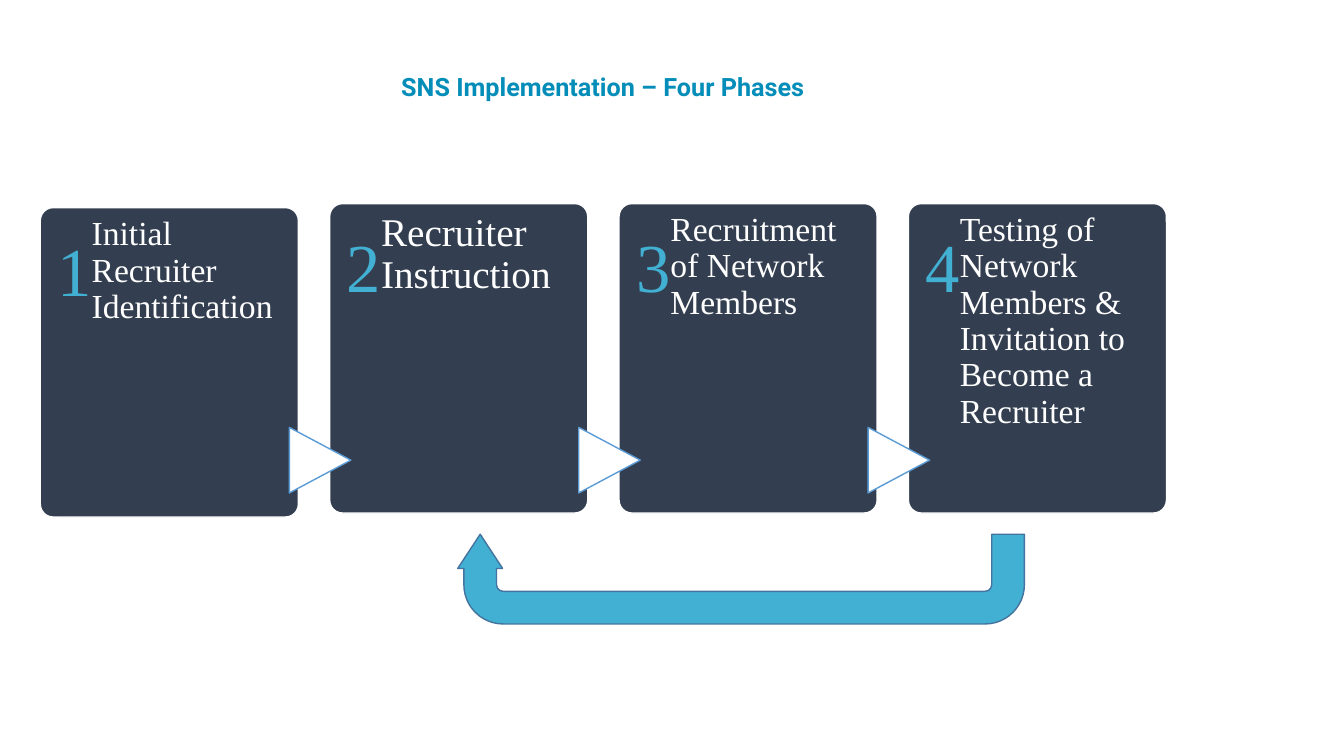
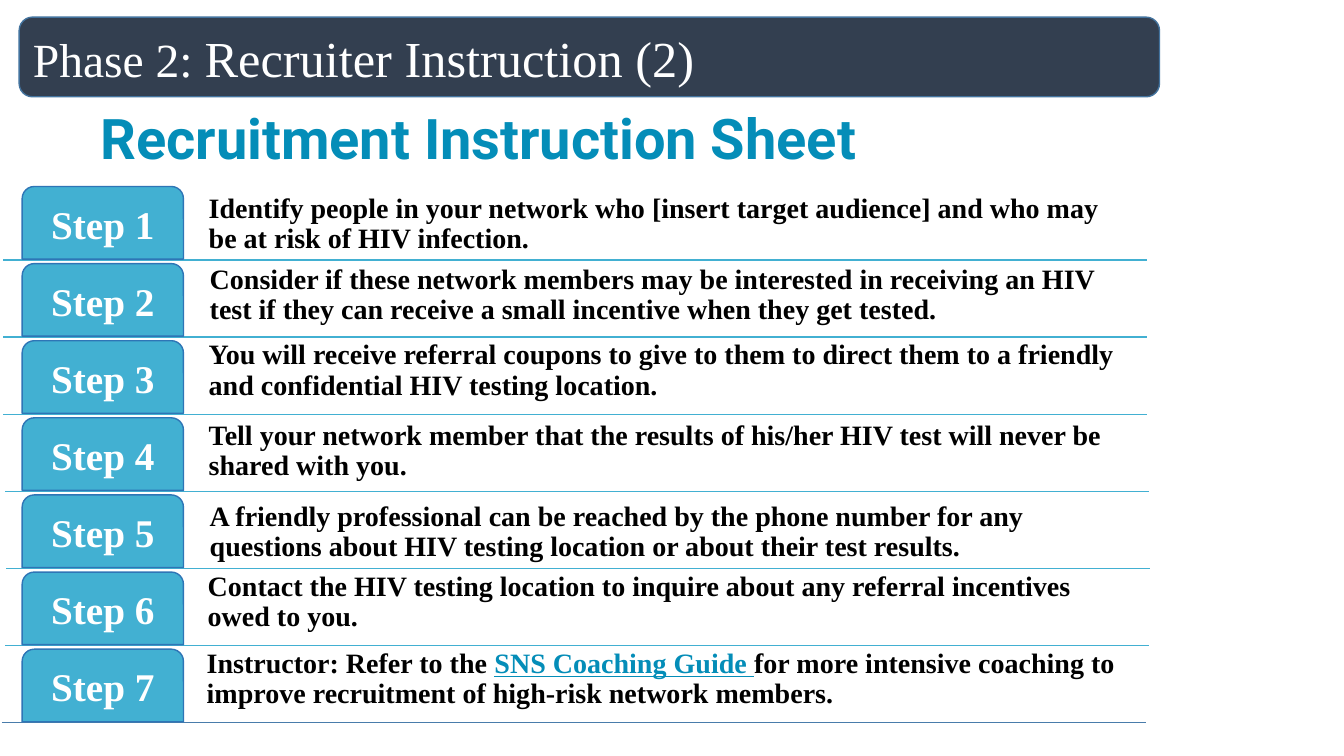
"""Build two slides on the phases and recruiter steps of the SNS programme."""
import pptx
import pptx.dml.color
import pptx.enum.shapes
import pptx.enum.text
import pptx.oxml.ns
import pptx.util
from lxml import etree

Inches = pptx.util.Inches
Pt = pptx.util.Pt
RGBColor = pptx.dml.color.RGBColor
SHAPE = pptx.enum.shapes.MSO_SHAPE
ALIGN = pptx.enum.text.PP_ALIGN
ANCHOR = pptx.enum.text.MSO_ANCHOR

NAVY = RGBColor(0x33, 0x3F, 0x50)
SKY = RGBColor(0x42, 0xB0, 0xD2)
TEAL = RGBColor(0x04, 0x8D, 0xB8)
EDGE = RGBColor(0x43, 0x73, 0x9E)
STEP_EDGE = RGBColor(0x2E, 0x75, 0xB6)
ARROW_EDGE = RGBColor(0x5B, 0x9B, 0xD5)
LAST_RULE = RGBColor(0x49, 0x7C, 0xAB)
WHITE = RGBColor(0xFF, 0xFF, 0xFF)
BLACK = RGBColor(0, 0, 0)
SERIF = "Times New Roman"
TITLE = dict(font="Roboto", color=TEAL, bold=True, anchor=ANCHOR.MIDDLE)


def add_text(s, text, box=None, sp=None, size=20, font=SERIF, color=BLACK, bold=False,
             align=ALIGN.LEFT, anchor=ANCHOR.TOP, inset=(0.1, 0.05, 0.1, 0.05), spacing=0.9):
    """Write text, or (text, overrides) runs, into a shape or a new text box."""
    if sp is None:
        sp = s.shapes.add_textbox(*map(Inches, box))
    tf = sp.text_frame
    tf.word_wrap = True
    tf.vertical_anchor = anchor
    tf.margin_left, tf.margin_top, tf.margin_right, tf.margin_bottom = map(Inches, inset)
    p = tf.paragraphs[0]
    p.alignment = align
    p.line_spacing = spacing
    for words, change in [(text, {})] if isinstance(text, str) else text:
        r = p.add_run()
        r.text = words
        r.font.name = font
        r.font.size = Pt(change.get("size", size))
        r.font.bold = bold
        r.font.underline = change.get("underline", False)
        r.font.color.rgb = change.get("color", color)


def add_shape(s, kind, box, fill, line, adjust=(), rotation=0):
    """Add a flat preset shape."""
    sp = s.shapes.add_shape(kind, *map(Inches, box))
    sp.shadow.inherit = False
    sp.fill.solid()
    sp.fill.fore_color.rgb = fill
    sp.line.color.rgb = line
    sp.line.width = Pt(1)
    sp.rotation = rotation
    for i, value in enumerate(adjust):
        sp.adjustments[i] = value
    return sp


prs = pptx.Presentation()
prs.slide_width = Inches(13.33)
prs.slide_height = Inches(7.5)
blank = prs.slide_layouts[6]

s = prs.slides.add_slide(blank)
add_text(s, "SNS Implementation – Four Phases", (1.15, 0.46, 9.66, 0.83), size=18,
         align=ALIGN.CENTER, **TITLE)
add_shape(s, SHAPE.U_TURN_ARROW, (4.54, 5.3, 5.62, 0.89), SKY, EDGE,
          (0.364, 0.25, 0.381, 0.438, 1), 180)

phases = [
    ("Initial Recruiter Identification", 24, 2.06),
    ("Recruiter Instruction", 28, 2.02),
    ("Recruitment of Network Members", 24, 2.02),
    ("Testing of Network Members & Invitation to Become a Recruiter", 24, 2.02),
]
for i, (phase, size, top) in enumerate(phases):
    left = 0.4 + 2.87 * i
    add_shape(s, SHAPE.ROUNDED_RECTANGLE, (left, top, 2.56, 3.07), NAVY, WHITE, [0.05])
    add_text(s, str(i + 1), (left, top, 0.51, 2.52), size=49, color=SKY,
             align=ALIGN.RIGHT, inset=(0, 0.29, 0, 0))
    if i:
        add_shape(s, SHAPE.FLOWCHART_EXTRACT, (left - 0.42, 4.26, 0.65, 0.61), WHITE,
                  ARROW_EDGE, rotation=90)
    add_text(s, phase, (left + 0.51, top, 1.9, 3.07), size=size, color=WHITE,
             inset=(0, 0.09, 0, 0))

s = prs.slides.add_slide(blank)
add_text(s, "Recruitment Instruction Sheet", (0.9, 0.97, 10.6, 0.87), size=40, **TITLE)
steps = [
    ("Identify people in your network who [insert target audience] and who may be at risk of HIV "
     "infection.", 2.03, 2.57, 0.03),
    ("Consider if these network members may be interested in receiving an HIV test if they can "
     "receive a small incentive when they get tested.", 2.04, 3.27, 0.03),
    ("You will receive referral coupons to give to them to direct them to a friendly and "
     "confidential HIV testing location.", 2.03, 4.02, 0.03),
    ("Tell your network member that the results of his/her HIV test will never be shared with "
     "you.", 2.03, 4.82, 0.05),
    ("A friendly professional can be reached by the phone number for any questions about HIV "
     "testing location or about their test results.", 2.04, 5.62, 0.06),
    ("Contact the HIV testing location to inquire about any referral incentives owed to you.",
     2.02, 6.32, 0.05),
    ([("Instructor: Refer to the ", {}),
      ("SNS Coaching Guide ", {"color": TEAL, "underline": True}),
      ("for more intensive coaching to improve recruitment of high-risk network members.", {})],
     2.01, 7.08, 0.02),
]
for i, (step, left, bottom, rule_left) in enumerate(steps):
    top = 1.85 + 0.765 * i
    rule = s.shapes.add_connector(pptx.enum.shapes.MSO_CONNECTOR.STRAIGHT, Inches(rule_left),
                                  Inches(top + 0.73), Inches(rule_left + 11.35),
                                  Inches(top + 0.73))
    rule.line.color.rgb = LAST_RULE if i == len(steps) - 1 else SKY
    rule.line.width = Pt(1)
    etree.SubElement(rule._element.spPr, pptx.oxml.ns.qn("a:effectLst"))
    add_text(s, step, (left, bottom - 0.72, 9.14, 0.72), bold=True, anchor=ANCHOR.BOTTOM,
             inset=[0.04] * 4)
    sp = add_shape(s, SHAPE.ROUND_2_SAME_RECTANGLE, (0.22, top, 1.6, 0.72), SKY, STEP_EDGE,
                   (0.167, 0))
    add_text(s, f"Step {i + 1}", sp=sp, size=28, color=WHITE, bold=True, align=ALIGN.CENTER,
             anchor=ANCHOR.MIDDLE, inset=(0.06, 0.08, 0.06, 0.04))

sp = add_shape(s, SHAPE.ROUNDED_RECTANGLE, (0.19, 0.17, 11.31, 0.79), NAVY, EDGE)
add_text(s, [("Phase 2: ", {"size": 34}), ("Recruiter Instruction (2)", {})], sp=sp, size=36,
         color=WHITE, anchor=ANCHOR.MIDDLE, spacing=1.0)

prs.save("out.pptx")
